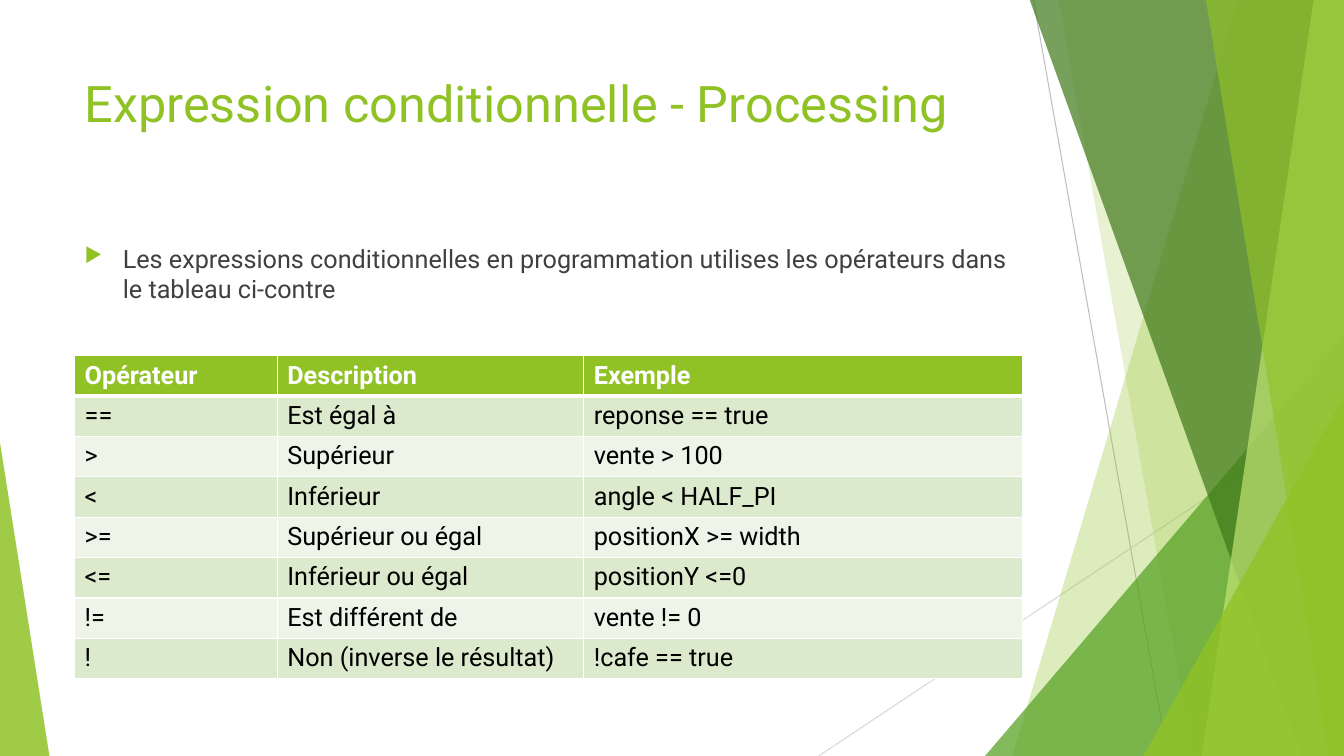
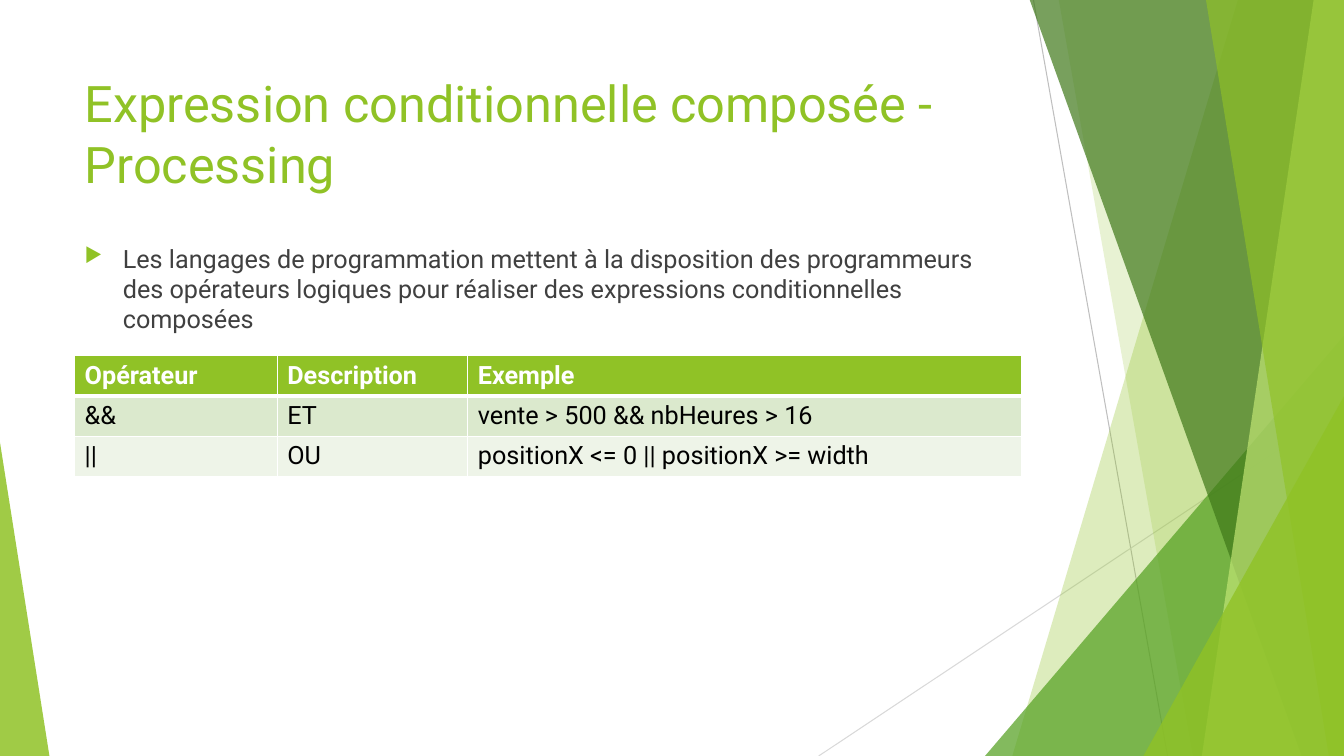
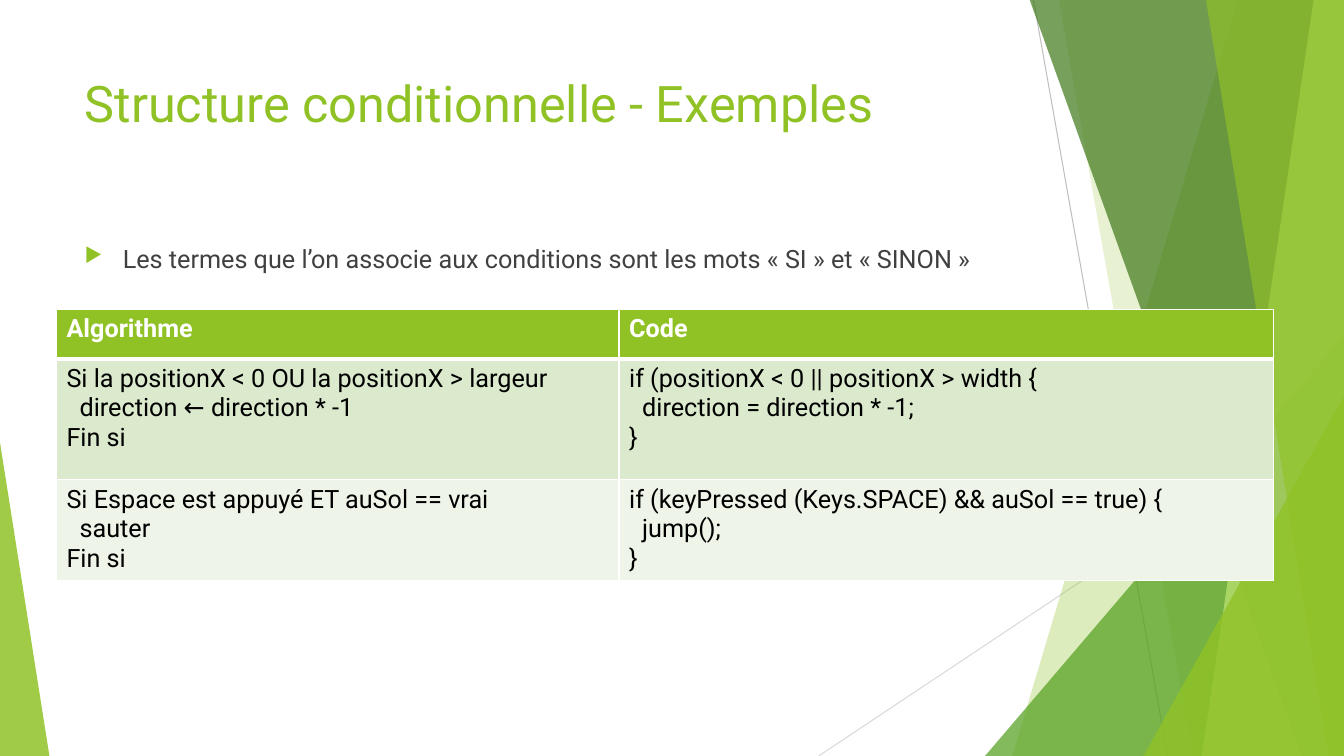
"""Build three slides about conditional expressions, with green facets on the layout."""
import pptx
import pptx.util
import pptx.oxml
import pptx.oxml.ns
import pptx.dml.color
import pptx.enum.shapes
import pptx.enum.text

RGB = pptx.dml.color.RGBColor
Pt = pptx.util.Pt
PX = 9144
WIDE, HIGH = 1333, 750
FONT = "Roboto"
GREEN = RGB(0x90, 0xC2, 0x26)
LEAF = RGB(0x54, 0xA0, 0x21)
DARK = RGB(0x3F, 0x78, 0x19)
LIME = RGB(0xC0, 0xE4, 0x74)
BAND = RGB(0xDB, 0xE9, 0xCD)
PALE = RGB(0xEE, 0xF4, 0xE8)
GREY = RGB(0x40, 0x40, 0x40)
SILVER = RGB(0xBF, 0xBF, 0xBF)
MIST = RGB(0xD9, 0xD9, 0xD9)
WHITE = RGB(0xFF, 0xFF, 0xFF)
BLACK = RGB(0, 0, 0)
NS = pptx.oxml.ns.nsdecls("a")


def style(para, size, color, bold=False):
    para.alignment = pptx.enum.text.PP_ALIGN.LEFT
    for run in para.runs:
        run.font.name = FONT
        run.font.size = Pt(size)
        run.font.bold = bold
        run.font.color.rgb = color


def paint(shape, color, alpha):
    shape.shadow.inherit = False
    shape.line.fill.background()
    shape.fill.solid()
    shape.fill.fore_color.rgb = color
    tone = shape.element.spPr.find(".//" + pptx.oxml.ns.qn("a:srgbClr"))
    tone.append(pptx.oxml.parse_xml(f'<a:alpha {NS} val="{alpha * 1000}"/>'))


PAGES = [
    {
        "title": "Expression conditionnelle - Processing",
        "body": "Les expressions conditionnelles en programmation utilises les opérateurs dans le tableau ci-contre",
        "at": (74, 353), "cols": [201, 304, 435], "rows": [39] * 8,
        "cells": [
            ["Opérateur", "Description", "Exemple"],
            ["==", "Est égal à", "reponse == true"],
            [">", "Supérieur", "vente > 100"],
            ["<", "Inférieur", "angle < HALF_PI"],
            [">=", "Supérieur ou égal", "positionX >= width"],
            ["<=", "Inférieur ou égal", "positionY <=0"],
            ["!=", "Est différent de", "vente != 0"],
            ["!", "Non (inverse le résultat)", "!cafe == true"],
        ],
    },
    {
        "title": "Expression conditionnelle composée - Processing",
        "body": "Les langages de programmation mettent à la disposition des programmeurs des opérateurs "
                "logiques pour réaliser des expressions conditionnelles composées",
        "at": (74, 353), "cols": [201, 189, 549], "rows": [39] * 3,
        "cells": [
            ["Opérateur", "Description", "Exemple"],
            ["&&", "ET", "vente > 500 && nbHeures > 16"],
            ["||", "OU", "positionX <= 0 || positionX >= width"],
        ],
    },
    {
        "title": "Structure conditionnelle - Exemples",
        "body": "Les termes que l’on associe aux conditions sont les mots « SI » et « SINON »",
        "at": (56, 307), "cols": [558, 649], "rows": [49, 120, 98],
        "cells": [
            ["Algorithme", "Code"],
            ["Si la positionX < 0 OU la positionX > largeur\ndirection ← direction * -1\nFin si",
             "if (positionX < 0 || positionX > width {\ndirection = direction * -1;\n}"],
            ["Si Espace est appuyé ET auSol == vrai\nsauter\nFin si",
             "if (keyPressed (Keys.SPACE) && auSol == true) {\njump();\n}"],
        ],
    },
]
LINES = [(1025, 0, 1158, HIGH, SILVER), (WIDE, 403, 812, HIGH, MIST)]
FACETS = [
    ("blade", 1228, 1004, GREEN, 30),
    ("blade", 1050, 1183, GREEN, 20),
    ("wedge", 977, 333, LEAF, 72),
    ("blade", 1021, 1291, DARK, 70),
    ("blade", 1303, 1192, LIME, 70),
    ("blade", 1196, 1318, GREEN, 65),
    ("wedge", 1134, 393, GREEN, 80),
]

prs = pptx.Presentation()
prs.slide_width, prs.slide_height = WIDE * PX, HIGH * PX
layout = prs.slide_layouts[5]
for spot in list(layout.placeholders)[1:]:
    spot.element.getparent().remove(spot.element)
slides = [prs.slides.add_slide(layout) for page in PAGES]

shapes = slides[0].shapes
decor = []
for x1, y1, x2, y2, color in LINES:
    line = shapes.add_connector(pptx.enum.shapes.MSO_CONNECTOR.STRAIGHT,
                                x1 * PX, y1 * PX, x2 * PX, y2 * PX)
    line.line.color.rgb = color
    line.line.width = Pt(0.75)
    line.element.spPr.append(pptx.oxml.parse_xml(f"<a:effectLst {NS}/>"))
    decor.append(line)
for kind, first, second, color, alpha in FACETS:
    if kind == "blade":
        pen = shapes.build_freeform(first, -1, scale=PX)
        pen.add_line_segments([(WIDE, -1), (WIDE, HIGH), (second, HIGH)], close=True)
        facet = pen.convert_to_shape()
    else:
        facet = shapes.add_shape(pptx.enum.shapes.MSO_SHAPE.ISOSCELES_TRIANGLE, first * PX,
                                 second * PX, (WIDE - first) * PX, (HIGH - second) * PX)
        facet.adjustments[0] = 1
    paint(facet, color, alpha)
    decor.append(facet)
corner = shapes.add_shape(pptx.enum.shapes.MSO_SHAPE.ISOSCELES_TRIANGLE,
                          0, 439 * PX, 49 * PX, 311 * PX)
corner.adjustments[0] = 0
paint(corner, GREEN, 85)
decor.append(corner)
for item in decor:
    layout.shapes.element.append(item.element)

for slide, page in zip(slides, PAGES):
    title = slide.shapes.title
    title.left, title.top, title.width, title.height = 74 * PX, 67 * PX, 940 * PX, 144 * PX
    frame = title.text_frame
    frame.text = page["title"]
    frame.word_wrap = True
    frame.auto_size = pptx.enum.text.MSO_AUTO_SIZE.NONE
    frame.vertical_anchor = pptx.enum.text.MSO_ANCHOR.TOP
    style(frame.paragraphs[0], 36, GREEN)

    body = slide.shapes.add_textbox(74 * PX, 236 * PX, 940 * PX, 92 * PX)
    body.text_frame.word_wrap = True
    body.text_frame.text = page["body"]
    para = body.text_frame.paragraphs[0]
    para.space_before = Pt(10)
    style(para, 18, GREY)
    props = para._p.get_or_add_pPr()
    props.set("marL", str(38 * PX))
    props.set("indent", str(-38 * PX))
    for mark in (f'<a:buClr {NS}><a:srgbClr val="{GREEN}"/></a:buClr>',
                 f'<a:buSzPct {NS} val="80000"/>',
                 f'<a:buChar {NS} char="▶"/>'):
        props.append(pptx.oxml.parse_xml(mark))

    cols, rows = page["cols"], page["rows"]
    left, top = page["at"]
    table = slide.shapes.add_table(len(rows), len(cols), left * PX, top * PX,
                                   sum(cols) * PX, sum(rows) * PX).table
    for col, width in zip(table.columns, cols):
        col.width = width * PX
    for row, height in zip(table.rows, rows):
        row.height = height * PX
    for r, texts in enumerate(page["cells"]):
        head = r == 0
        for c, text in enumerate(texts):
            cell = table.cell(r, c)
            cell.text_frame.text = text
            for step, para in enumerate(cell.text_frame.paragraphs):
                style(para, 18, WHITE if head else BLACK, head)
                if step == 1:
                    para._p.get_or_add_pPr().set("marL", str(13 * PX))
            cell.fill.solid()
            cell.fill.fore_color.rgb = GREEN if head else BAND if r % 2 else PALE
            edges = {"L": 1, "R": 1, "T": 3 if r == 1 else 1, "B": 3 if head else 1}
            for spot, (side, size) in enumerate(edges.items()):
                cell._tc.get_or_add_tcPr().insert(spot, pptx.oxml.parse_xml(
                    f'<a:ln{side} {NS} w="{Pt(size)}"><a:solidFill>'
                    f'<a:srgbClr val="{WHITE}"/></a:solidFill></a:ln{side}>'))

prs.save("out.pptx")
